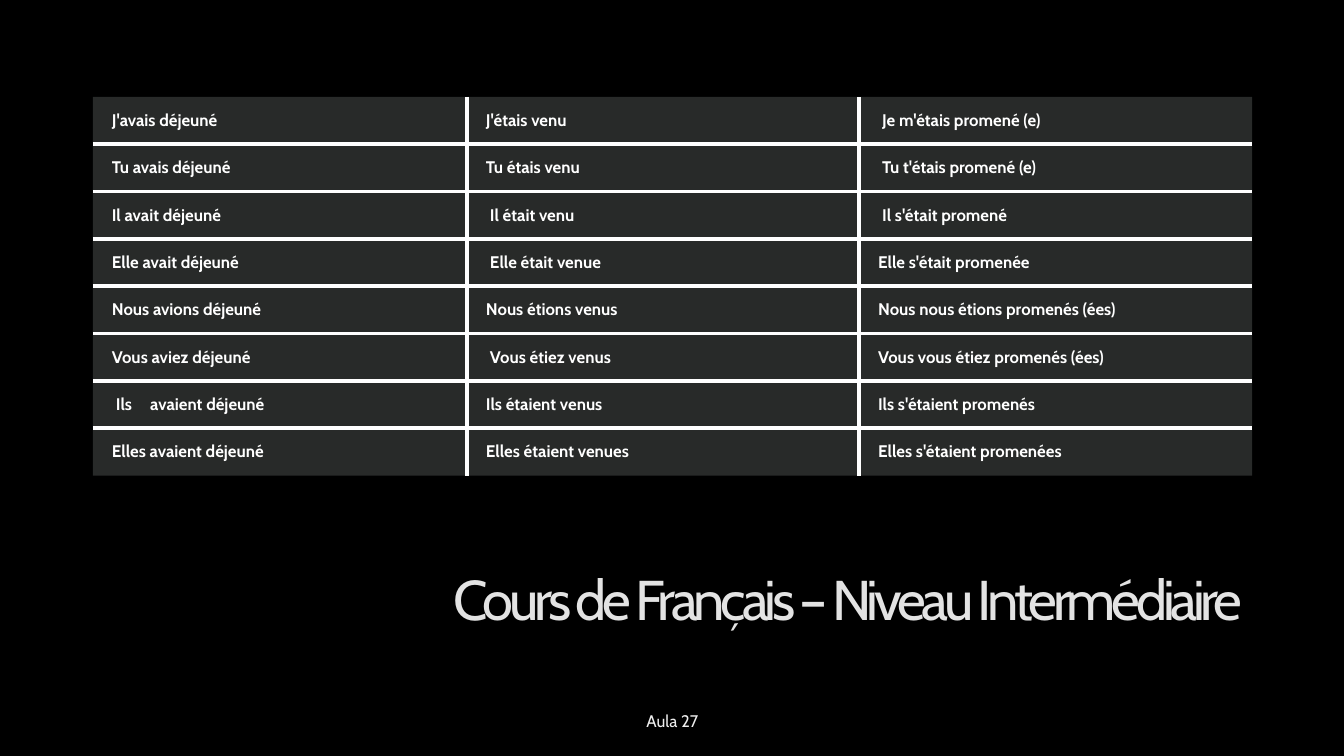
from lxml import etree
from pptx import Presentation
from pptx.dml.color import RGBColor
from pptx.enum.text import MSO_ANCHOR as Anchor, PP_ALIGN as Align
from pptx.oxml.ns import qn
from pptx.util import Inches, Pt

# Content
TITLE = "Cours de Français – Niveau Intermédiaire"
LESSON = "Aula 27"
VERBS = [
    ("J'avais déjeuné", "J'étais venu", "Je m'étais promené (e)"),
    ("Tu avais déjeuné", "Tu étais venu", "Tu t'étais promené (e)"),
    ("Il avait déjeuné", "Il était venu", "Il s'était promené"),
    ("Elle avait déjeuné", "Elle était venue", "Elle s'était promenée"),
    ("Nous avions déjeuné", "Nous étions venus", "Nous nous étions promenés (ées)"),
    ("Vous aviez déjeuné", "Vous étiez venus", "Vous vous étiez promenés (ées)"),
    ("Ils\tavaient déjeuné", "Ils étaient venus", "Ils s'étaient promenés"),
    ("Elles avaient déjeuné", "Elles étaient venues", "Elles s'étaient promenées"),
]
NUDGED = {(0, 2), (1, 2), (2, 1), (2, 2), (3, 1), (5, 1), (6, 0)}
WIDTHS = (3.71, 3.89, 3.9)
ROW_H = 0.47
FONT = "Cabin"
WHITE = "FFFFFF"


def color(code):
    return RGBColor.from_string(code)


def style(para, size, code, bold=False):
    for run in para.runs:
        font = run.font
        font.name, font.size, font.bold = FONT, Pt(size), bold
        font.color.rgb = color(code)


def add_text(slide, text, box, size, code, align, anchor):
    frame = slide.shapes.add_textbox(*map(Inches, box)).text_frame
    frame.word_wrap = True
    frame.vertical_anchor = anchor
    frame.text = text
    para = frame.paragraphs[0]
    para.alignment = align
    style(para, size, code)
    return para


def set_edges(cell, inner):
    """Draw white lines on inner sides, none on the outer frame."""
    props = cell._tc.get_or_add_tcPr()
    for pos, (side, shown) in enumerate(inner.items()):
        line = etree.Element(qn("a:ln" + side), w=str(Pt(3)))
        if shown:
            fill = etree.SubElement(line, qn("a:solidFill"))
            etree.SubElement(fill, qn("a:srgbClr"), val=WHITE)
        else:
            etree.SubElement(line, qn("a:noFill"))
        props.insert(pos, line)


def fill_cell(cell, text, nudge):
    cell.fill.solid()
    cell.fill.fore_color.rgb = color("878E8B")
    tint = cell._tc.tcPr.find(".//" + qn("a:srgbClr"))
    etree.SubElement(tint, qn("a:alpha"), val="30000")
    cell.vertical_anchor = Anchor.MIDDLE
    cell.margin_left = Inches(0.23 if nudge else 0.19)
    cell.margin_right = cell.margin_top = cell.margin_bottom = Inches(0.12)
    para = cell.text_frame.paragraphs[0]
    para.text = text
    if "\t" in text:
        tabs = etree.SubElement(para._p.get_or_add_pPr(), qn("a:tabLst"))
        etree.SubElement(tabs, qn("a:tab"), pos=str(Inches(0.34)), algn="l")
    style(para, 12, WHITE, True)


def add_verbs(slide):
    rows, cols = len(VERBS), len(WIDTHS)
    size = (0.92, 0.96, sum(WIDTHS), ROW_H * rows)
    table = slide.shapes.add_table(rows, cols, *map(Inches, size)).table
    table.first_row = table.horz_banding = False
    for col, width in zip(table.columns, WIDTHS):
        col.width = Inches(width)
    for r, forms in enumerate(VERBS):
        table.rows[r].height = Inches(ROW_H)
        for c, text in enumerate(forms):
            cell = table.cell(r, c)
            fill_cell(cell, text, (r, c) in NUDGED)
            set_edges(cell, {"L": c > 0, "R": c < cols - 1,
                             "T": r > 0, "B": r < rows - 1})


def main():
    deck = Presentation()
    deck.slide_width, deck.slide_height = Inches(13.33), Inches(7.5)
    slide = deck.slides.add_slide(deck.slide_layouts[6])
    back = slide.background.fill
    back.solid()
    back.fore_color.rgb = color("000000")

    # Title and lesson number
    title = add_text(slide, TITLE, (0.92, 5.63, 11.5, 1.05), 40, "E3E3E3",
                     Align.RIGHT, Anchor.TOP)
    title.line_spacing = 0.9
    title.runs[0].font._element.set("spc", "-300")
    add_text(slide, LESSON, (4.42, 6.95, 4.5, 0.4), 12, "EDEDED",
             Align.CENTER, Anchor.MIDDLE)

    # Conjugation table
    add_verbs(slide)
    deck.save("out.pptx")


if __name__ == "__main__":
    main()
